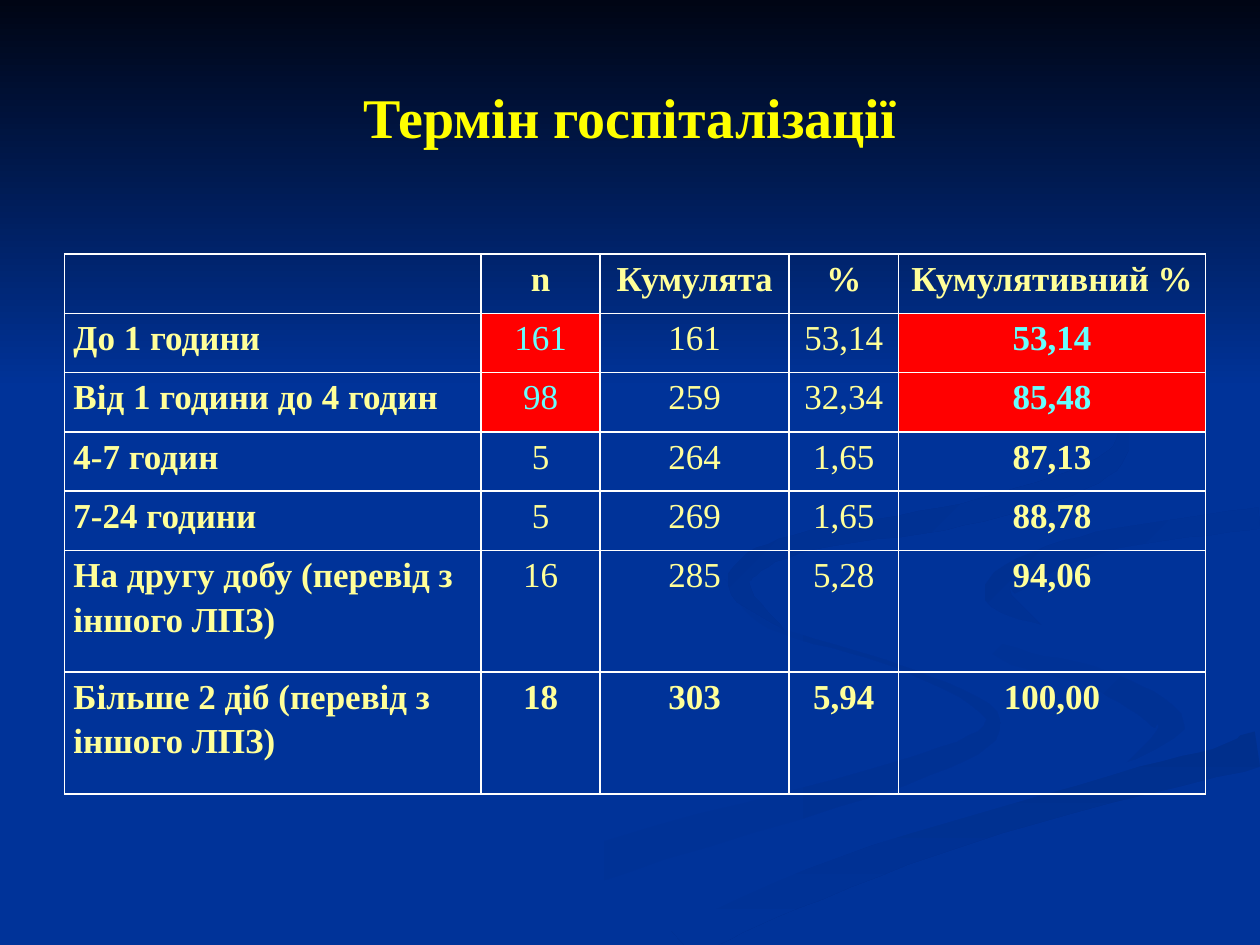
from itertools import pairwise
from math import hypot
from typing import NamedTuple

from pptx import Presentation
from pptx.dml.color import RGBColor
from pptx.enum.shapes import MSO_SHAPE
from pptx.enum.text import MSO_ANCHOR, PP_ALIGN
from pptx.oxml import parse_xml
from pptx.oxml.ns import nsdecls
from pptx.util import Pt

SLIDE_WIDTH, SLIDE_HEIGHT = 720, 540
FONT = "Times New Roman"
BLUE = RGBColor(0x00, 0x33, 0x99)
NIGHT = RGBColor(0x00, 0x05, 0x14)
SHADE_SPIRAL = RGBColor(0x00, 0x31, 0x93)
SHADE_TAIL = RGBColor(0x00, 0x2F, 0x8C)
SHADE_CURL = RGBColor(0x00, 0x30, 0x91)
SHADE_HOOK = RGBColor(0x00, 0x2F, 0x8E)
YELLOW = RGBColor(0xFF, 0xFF, 0x00)
CREAM = RGBColor(0xFF, 0xFF, 0x99)
CYAN = RGBColor(0x66, 0xFF, 0xFF)
RED = RGBColor(0xFF, 0x00, 0x00)
WHITE = RGBColor(0xFF, 0xFF, 0xFF)


class Ribbon(NamedTuple):
    first: RGBColor
    last: RGBColor
    angle: int
    bends: list


# Each bend of a ribbon is (x, y, thickness) on its centre line.
RIBBONS = {
    "spiral": Ribbon(BLUE, SHADE_SPIRAL, 0, [
        (414, 331, 0), (440, 358, 3), (514, 381, 2), (568, 412, 9),
        (515, 442, 14), (335, 495, 22), (238, 540, 26)]),
    "inner bend": Ribbon(BLUE, SHADE_SPIRAL, 45, [
        (521, 334, 0), (573, 371, 11), (630, 389, 12), (669, 415, 17), (644, 436, 0)]),
    "tail": Ribbon(SHADE_TAIL, BLUE, 90, [
        (720, 428, 20), (570, 468, 17), (440, 515, 20), (386, 540, 24)]),
    "wide band": Ribbon(BLUE, BLUE, 0, [
        (720, 284, 10), (587, 306, 12), (543, 333, 38), (585, 360, 22),
        (650, 380, 15), (698, 405, 34), (650, 436, 5), (477, 486, 9), (352, 540, 14)]),
    "curl": Ribbon(SHADE_CURL, BLUE, 45, [
        (720, 296, 12), (628, 310, 12), (571, 336, 17), (595, 357, 0)]),
    "hook": Ribbon(SHADE_HOOK, BLUE, 45, [
        (549, 168, 0), (609, 200, 2), (641, 244, 5), (625, 270, 13),
        (550, 294, 13), (455, 311, 11), (422, 333, 13), (448, 360, 0)]),
}
STEPS_PER_BEND = 8

ROWS = [
    ("", "n", "Кумулята", "%", "Кумулятивний %"),
    ("До 1 години", "161", "161", "53,14", "53,14"),
    ("Від 1 години до 4 годин", "98", "259", "32,34", "85,48"),
    ("4-7 годин", "5", "264", "1,65", "87,13"),
    ("7-24 години", "5", "269", "1,65", "88,78"),
    ("На другу добу (перевід з іншого ЛПЗ)", "16", "285", "5,28", "94,06"),
    ("Більше 2 діб (перевід з іншого ЛПЗ)", "18", "303", "5,94", "100,00"),
]
COLUMN_SHARES = [238, 68, 108, 62.5, 175.5]
ROW_SHARES = [33.9] * 5 + [69.6] * 2
HIGHLIGHTED = {(row, column) for row in (1, 2) for column in (1, 4)}
BOLD_ROWS = (0, len(ROWS) - 1)
BOLD_COLUMNS = (0, 4)


def write_text(frame, text, size=20, color=CREAM, bold=False,
               align=PP_ALIGN.CENTER, spacing=1.0):
    paragraph = frame.paragraphs[0]
    paragraph.alignment = align
    paragraph.line_spacing = spacing
    run = paragraph.add_run()
    run.text = text
    run.font.name = FONT
    run.font.size = Pt(size)
    run.font.bold = bold
    run.font.color.rgb = color


def paint(shape, first, last, angle):
    shape.shadow.inherit = False
    shape.line.fill.background()
    if first == last:
        shape.fill.solid()
        shape.fill.fore_color.rgb = first
        return
    shape.fill.gradient()
    shape.fill.gradient_angle = (360 - angle) % 360
    for stop, color, position in zip(shape.fill.gradient_stops, (first, last), (0, 1)):
        stop.color.rgb = color
        stop.position = position


def spline(before, start, end, after, t):
    return (start + t / 2 * (end - before)
            + t ** 2 / 2 * (2 * before - 5 * start + 4 * end - after)
            + t ** 3 / 2 * (3 * start - before - 3 * end + after))


def smooth_bends(bends):
    padded = [bends[0], *bends, bends[-1]]
    smooth = []
    for index in range(len(bends) - 1):
        neighbours = padded[index:index + 4]
        for step in range(STEPS_PER_BEND):
            smooth.append(tuple(spline(*values, step / STEPS_PER_BEND)
                                for values in zip(*neighbours)))
    return smooth + [bends[-1]]


def clamp_to_slide(x, y):
    return min(max(x, 0), SLIDE_WIDTH), min(max(y, 0), SLIDE_HEIGHT)


def ribbon_outline(bends):
    centre = smooth_bends(bends)
    one_side, other_side = [], []
    segments = list(pairwise(centre))
    for (x, y, thickness), (start, end) in zip(centre, segments + segments[-1:]):
        run, rise = end[0] - start[0], end[1] - start[1]
        reach = max(thickness, 0) / 2 / hypot(run, rise)
        one_side.append(clamp_to_slide(x - rise * reach, y + run * reach))
        other_side.append(clamp_to_slide(x + rise * reach, y - run * reach))
    return one_side + other_side[::-1]


def add_ribbon(slide, ribbon):
    outline = ribbon_outline(ribbon.bends)
    builder = slide.shapes.build_freeform(*outline[0], scale=Pt(1))
    builder.add_line_segments(outline[1:], close=True)
    paint(builder.convert_to_shape(), ribbon.first, ribbon.last, ribbon.angle)


def add_backdrop(slide, left, top, width, height):
    slide.background.fill.solid()
    slide.background.fill.fore_color.rgb = BLUE
    for ribbon in RIBBONS.values():
        add_ribbon(slide, ribbon)
    sky = slide.shapes.add_shape(
        MSO_SHAPE.RECTANGLE, Pt(left), Pt(top), Pt(width), Pt(height))
    paint(sky, NIGHT, BLUE, 90)


def add_title(slide, left, top, width, height):
    title = slide.shapes.title
    title.left, title.top = Pt(left), Pt(top)
    title.width, title.height = Pt(width), Pt(height)
    title.text_frame.vertical_anchor = MSO_ANCHOR.MIDDLE
    write_text(title.text_frame, "Термін госпіталізації", size=32, color=YELLOW, bold=True)
    title.element.getparent().append(title.element)


def set_borders(cell):
    properties = cell._tc.get_or_add_tcPr()
    for index, side in enumerate(("lnL", "lnR", "lnT", "lnB")):
        properties.insert(index, parse_xml(
            f'<a:{side} {nsdecls("a")} w="{Pt(1)}"><a:solidFill>'
            f'<a:srgbClr val="{WHITE}"/></a:solidFill></a:{side}>'))


def format_cell(cell, text, highlighted, bold, align):
    cell.margin_left = cell.margin_right = Pt(5)
    cell.margin_top = cell.margin_bottom = Pt(0)
    if highlighted:
        cell.fill.solid()
        cell.fill.fore_color.rgb = RED
    else:
        cell.fill.background()
    set_borders(cell)
    if text:
        write_text(cell.text_frame, text, color=CYAN if highlighted else CREAM,
                   bold=bold, align=align, spacing=1.15)


def add_term_table(slide, left, top, width, height):
    table = slide.shapes.add_table(
        len(ROWS), len(COLUMN_SHARES), Pt(left), Pt(top), Pt(width), Pt(height)).table
    table.first_row = table.horz_banding = False
    for column, share in zip(table.columns, COLUMN_SHARES):
        column.width = Pt(width * share / sum(COLUMN_SHARES))
    for row, share in zip(table.rows, ROW_SHARES):
        row.height = Pt(height * share / sum(ROW_SHARES))
    for row, texts in enumerate(ROWS):
        for column, text in enumerate(texts):
            format_cell(table.cell(row, column), text,
                        highlighted=(row, column) in HIGHLIGHTED,
                        bold=row in BOLD_ROWS or column in BOLD_COLUMNS,
                        align=PP_ALIGN.CENTER if column else PP_ALIGN.LEFT)


def main():
    presentation = Presentation()
    presentation.slide_width, presentation.slide_height = Pt(SLIDE_WIDTH), Pt(SLIDE_HEIGHT)
    slide = presentation.slides.add_slide(presentation.slide_layouts[5])
    add_backdrop(slide, left=0, top=0, width=SLIDE_WIDTH, height=222)
    add_title(slide, left=36, top=21.6, width=648, height=90)
    add_term_table(slide, left=37, top=145.2, width=652, height=308.5)
    presentation.save("out.pptx")


if __name__ == "__main__":
    main()
